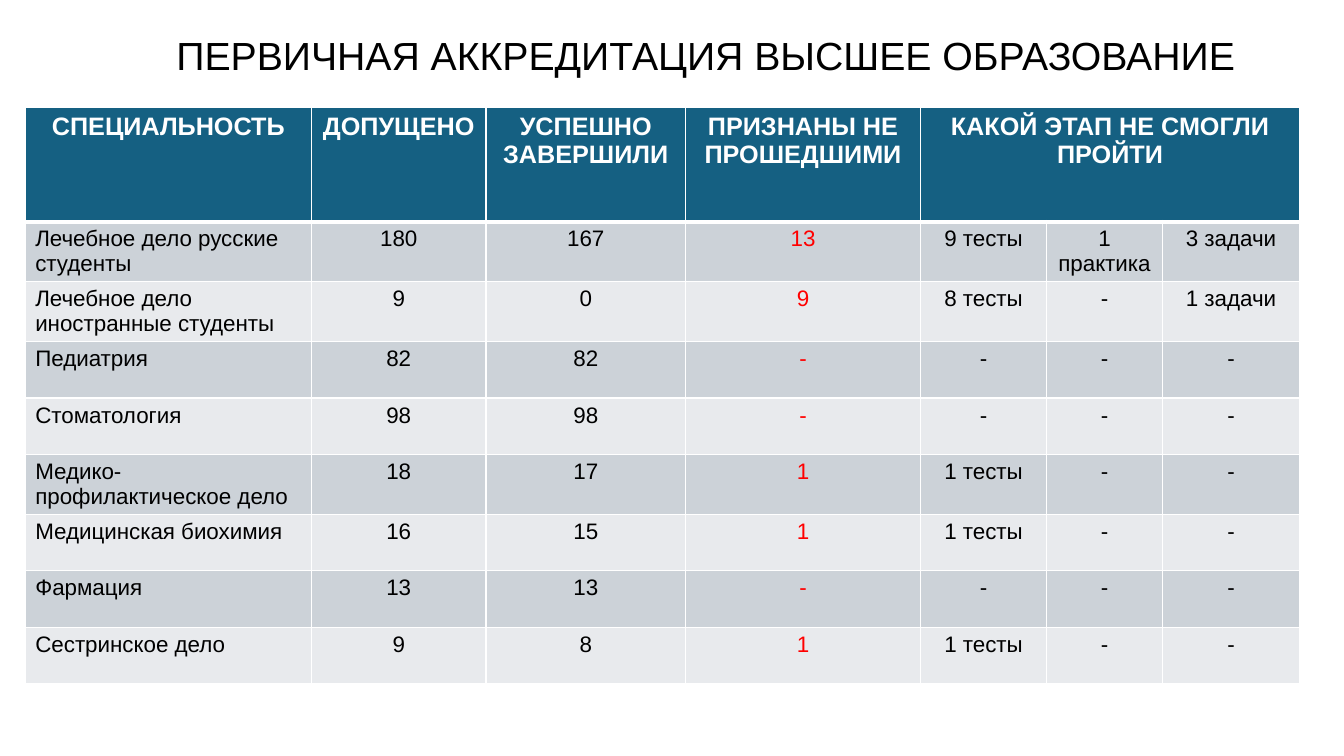
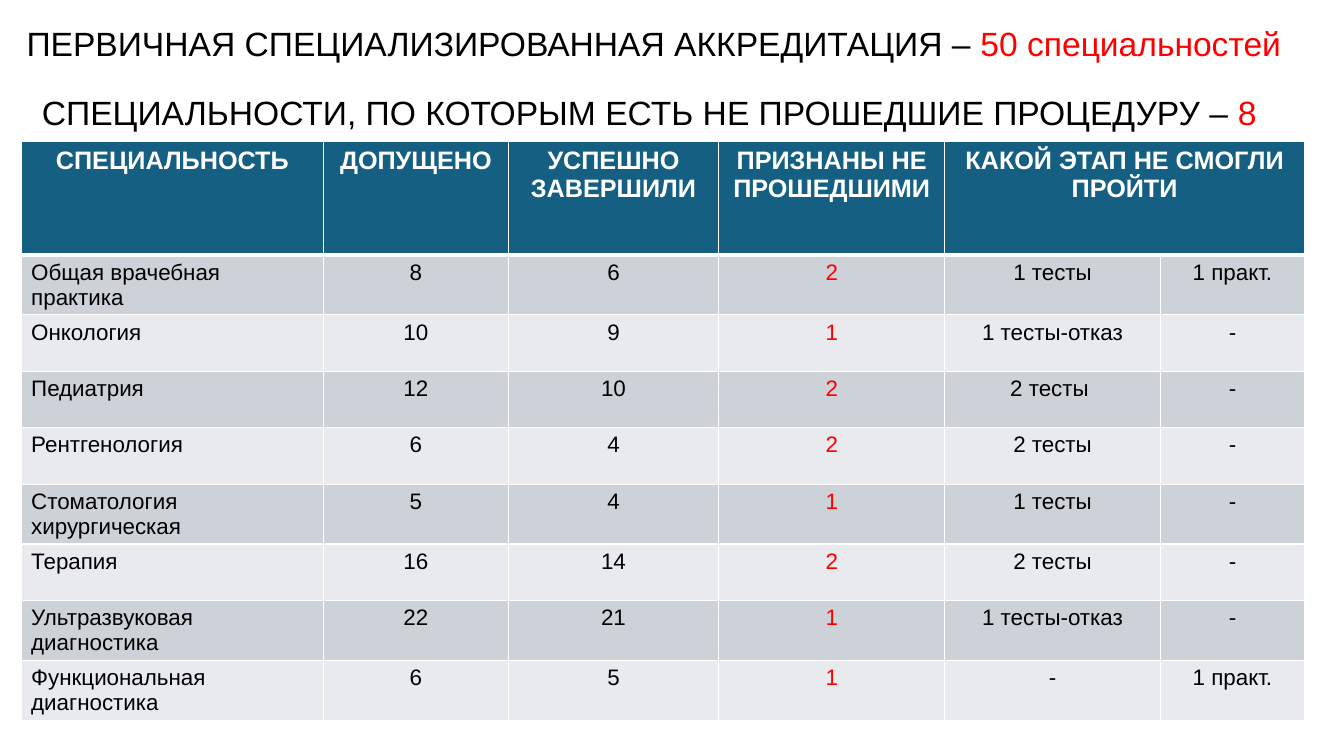
from pptx import Presentation
from pptx.dml.color import RGBColor as Rgb
from pptx.enum.text import MSO_ANCHOR as Anchor, MSO_AUTO_SIZE as Fit, PP_ALIGN as Align
from pptx.oxml import parse_xml
from pptx.oxml.ns import nsdecls
from pptx.util import Inches, Pt


def color(code):
    return Rgb.from_string(code)


def assign(target, values):
    for name, value in values.items():
        setattr(target, name, value)


class Deck:
    black, white, red = "000000", "FFFFFF", "FF0000"
    head, bands = "156082", ("CCD2D8", "E8EAED")
    frame = dict(word_wrap=False, auto_size=Fit.NONE, vertical_anchor=Anchor.TOP)
    heads = ("СПЕЦИАЛЬНОСТЬ", "ДОПУЩЕНО", "УСПЕШНО\nЗАВЕРШИЛИ",
             "ПРИЗНАНЫ НЕ ПРОШЕДШИМИ", "КАКОЙ ЭТАП НЕ СМОГЛИ ПРОЙТИ")
    failed = 3

    def __init__(self):
        self.show = Presentation()
        self.show.slide_width = Inches(13.33)
        self.show.slide_height = Inches(7.5)
        self.slide = None

    def page(self):
        self.slide = self.show.slides.add_slide(self.show.slide_layouts[5])

    def style(self, font, size, shade, bold=False):
        assign(font, dict(name="Arial", size=Pt(size), bold=bold))
        font.color.rgb = color(shade)

    def title(self, box, lines, size, align, gap=0):
        shape = self.slide.shapes.title
        assign(shape, dict(zip(("left", "top", "width", "height"), map(Inches, box))))
        frame = shape.text_frame
        assign(frame, self.frame)
        for index, line in enumerate(lines):
            para = frame.add_paragraph() if index else frame.paragraphs[0]
            assign(para, dict(alignment=align, line_spacing=1.0,
                              space_before=Pt(gap if index else 0)))
            for text, shade in line:
                run = para.add_run()
                run.text = text
                self.style(run.font, size, shade)

    def border(self, cell, top, bottom):
        props = cell._tc.get_or_add_tcPr()
        for side, width in dict(L=1, R=1, T=top, B=bottom).items():
            props.append(parse_xml(
                f'<a:ln{side} {nsdecls("a")} w="{Pt(width)}"><a:solidFill>'
                f'<a:srgbClr val="{self.white}"/></a:solidFill></a:ln{side}>'))

    def cell(self, cell, text, row, col):
        self.border(cell, 3 if row == 1 else 1, 1 if row else 3)
        cell.fill.solid()
        cell.fill.fore_color.rgb = color(self.bands[(row - 1) % 2] if row else self.head)
        cell.text = text
        shade = self.red if col == self.failed else self.black
        for para in cell.text_frame.paragraphs:
            para.alignment = Align.LEFT if row and not col else Align.CENTER
            if row:
                self.style(para.font, 16, shade)
            else:
                self.style(para.font, 18, self.white, True)

    def table(self, left, top, widths, rows):
        last = len(widths) - 1
        heads = self.heads + ("",) * (len(widths) - len(self.heads))
        heights = [1.13] + [0.56] * len(rows)
        grid = self.slide.shapes.add_table(
            len(heights), len(widths), Inches(left), Inches(top),
            Inches(sum(widths)), Inches(sum(heights))).table
        for col, width in zip(grid.columns, widths):
            col.width = Inches(width)
        for row, height in zip(grid.rows, heights):
            row.height = Inches(height)
        for row, texts in enumerate([heads, *rows]):
            for col, text in enumerate(texts):
                self.cell(grid.cell(row, col), text, row, col)
        grid.cell(0, len(self.heads) - 1).merge(grid.cell(0, last))


def main():
    deck = Deck()
    deck.page()
    deck.title((1.65, 0.26, 10.8, 0.57),
               [[("ПЕРВИЧНАЯ АККРЕДИТАЦИЯ ВЫСШЕЕ ОБРАЗОВАНИЕ", deck.black)]],
               28, Align.LEFT)
    deck.table(0.25, 1.07, (2.84, 1.73, 1.98, 2.33, 1.25, 1.15, 1.36), [
        ("Лечебное дело русские студенты", "180", "167", "13", "9 тесты", "1 практика", "3 задачи"),
        ("Лечебное дело иностранные студенты", "9", "0", "9", "8 тесты", "-", "1 задачи"),
        ("Педиатрия", "82", "82", "-", "-", "-", "-"),
        ("Стоматология", "98", "98", "-", "-", "-", "-"),
        ("Медико-профилактическое дело", "18", "17", "1", "1 тесты", "-", "-"),
        ("Медицинская биохимия", "16", "15", "1", "1 тесты", "-", "-"),
        ("Фармация", "13", "13", "-", "-", "-", "-"),
        ("Сестринское дело", "9", "8", "1", "1 тесты", "-", "-"),
    ])
    deck.page()
    deck.title((0.1, 0.18, 12.77, 1.18), [
        [("ПЕРВИЧНАЯ СПЕЦИАЛИЗИРОВАННАЯ АККРЕДИТАЦИЯ – ", deck.black),
         ("50 специальностей", deck.red)],
        [("СПЕЦИАЛЬНОСТИ, ПО КОТОРЫМ ЕСТЬ НЕ ПРОШЕДШИЕ ПРОЦЕДУРУ – ", deck.black),
         ("8 ", deck.red)],
    ], 24, Align.CENTER, 20)
    deck.table(0.21, 1.4, (3, 1.83, 2.09, 2.24, 2.14, 1.43), [
        ("Общая врачебная практика", "8", "6", "2", "1 тесты", "1 практ."),
        ("Онкология", "10", "9", "1", "1 тесты-отказ", "-"),
        ("Педиатрия", "12", "10", "2", "2 тесты ", "-"),
        ("Рентгенология", "6", "4", "2", "2 тесты", "-"),
        ("Стоматология хирургическая", "5", "4", "1", "1 тесты", "-"),
        ("Терапия", "16", "14", "2", "2 тесты", "-"),
        ("Ультразвуковая диагностика", "22", "21", "1", "1 тесты-отказ", "-"),
        ("Функциональная диагностика", "6", "5", "1", "-", "1 практ."),
    ])
    deck.show.save("out.pptx")


if __name__ == "__main__":
    main()
